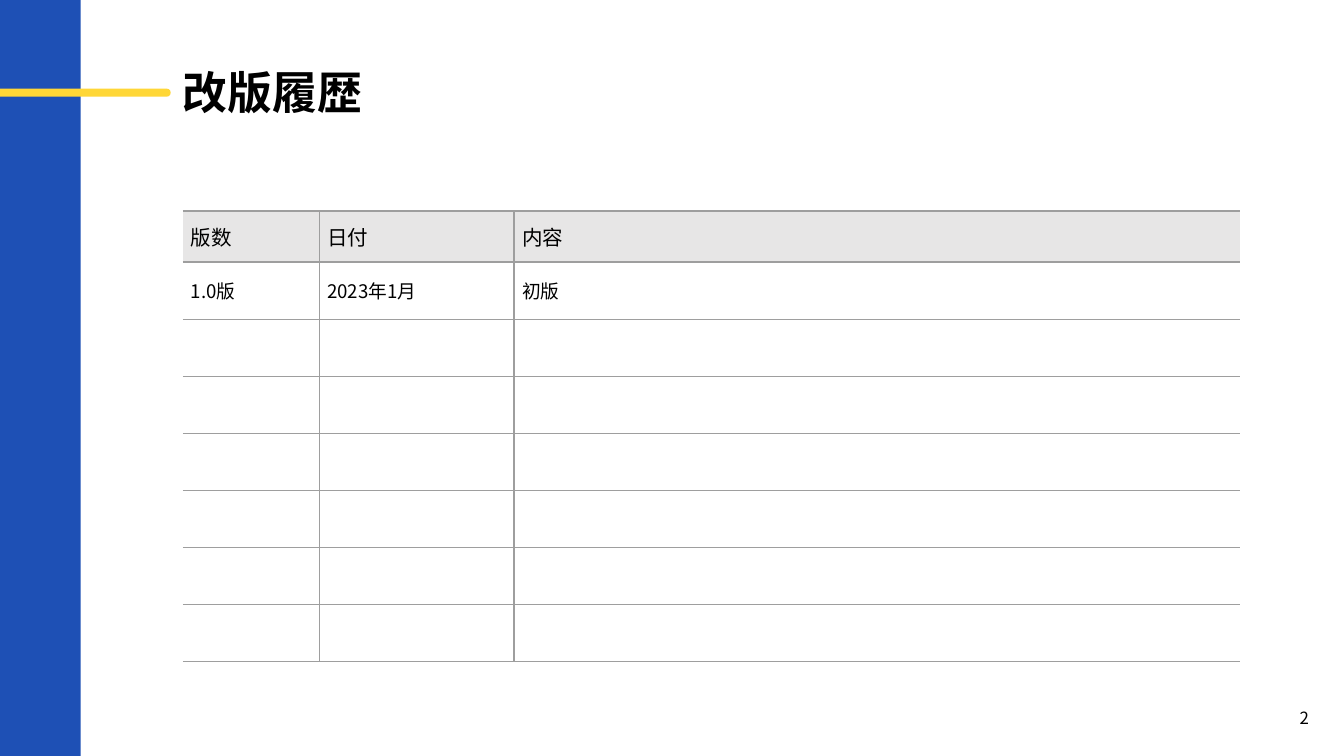
import pptx
import pptx.dml.color
import pptx.enum.shapes
import pptx.enum.text
import pptx.oxml.ns
import pptx.util
from lxml import etree

PX = 4572
FONT = "Noto Sans CJK JP"
COLORS = {"bar": "1E50B5", "stripe": "FFD737", "text": "000000", "head": "E7E6E6", "line": "9E9E9E"}
COLUMNS = (203, 290, 1081)
HEAD_H, ROW_H, INSET = 76, 85, 12
ROWS = [("版数", "日付", "内容"), ("1.0版", "2023年1月", "初版")] + [("", "", "")] * 6
MIDDLE = pptx.enum.text.MSO_ANCHOR.MIDDLE


def emu(*lengths):
    """Turn px lengths into EMU."""
    return [pptx.util.Emu(n * PX) for n in lengths]


def rgb(name):
    """Look up a named colour."""
    return pptx.dml.color.RGBColor.from_string(COLORS[name])


def sub(parent, tag, **attrs):
    """Append a DrawingML element."""
    return etree.SubElement(parent, pptx.oxml.ns.qn(tag), **attrs)


def write(tf, text, size, bold=False):
    """Set the text of a frame and format its run."""
    tf.text = text
    p = tf.paragraphs[0]
    for r in p.runs:
        r.font.size, r.font.bold, r.font.name = pptx.util.Pt(size), bold, FONT
        r.font.color.rgb = rgb("text")
        sub(r.font._element, "a:ea", typeface=FONT)
    if not text:
        sub(p._p, "a:endParaRPr", sz=str(size * 100))
    return p


def clear_insets(tf):
    """Remove the inner margins of a frame."""
    tf.margin_left = tf.margin_top = tf.margin_right = tf.margin_bottom = 0


def add_block(s, kind, box, color):
    """Add a plain filled shape."""
    sp = s.shapes.add_shape(kind, *emu(*box))
    sp.shadow.inherit = False
    sp.fill.solid()
    sp.fill.fore_color.rgb = rgb(color)
    sp.line.fill.background()
    return sp


def add_side(s, x, y, w, h):
    """Draw the side bar with the stripe that crosses it."""
    kinds = pptx.enum.shapes.MSO_SHAPE
    add_block(s, kinds.RECTANGLE, (x, y, w, h), "bar")
    stripe = add_block(s, kinds.ROUNDED_RECTANGLE, (x - 22, y + 132, w + 156, 12), "stripe")
    stripe.adjustments[0] = 0.5


def add_title(s, x, y, w, h):
    """Place and fill the title placeholder."""
    sp = s.shapes.title
    sp.left, sp.top, sp.width, sp.height = emu(x, y, w, h)
    tf = sp.text_frame
    clear_insets(tf)
    tf.vertical_anchor = pptx.enum.text.MSO_ANCHOR.TOP
    tf.auto_size = pptx.enum.text.MSO_AUTO_SIZE.SHAPE_TO_FIT_TEXT
    p = write(tf, "改版履歴", 24, True)
    p.alignment = pptx.enum.text.PP_ALIGN.LEFT
    p.line_spacing = 0.9


def add_page_number(s, x, y, w, h):
    """Write the page number in the centre of its box."""
    tf = s.shapes.add_textbox(*emu(x, y, w, h)).text_frame
    clear_insets(tf)
    tf.word_wrap = True
    tf.vertical_anchor = MIDDLE
    write(tf, "2", 9).alignment = pptx.enum.text.PP_ALIGN.CENTER


def add_border(cell, side, shown):
    """Set one border of a cell."""
    ln = sub(cell._tc.get_or_add_tcPr(), f"a:ln{side}", w=str(pptx.util.Pt(0.75)))
    if shown:
        sub(sub(ln, "a:solidFill"), "a:srgbClr", val=COLORS["line"])
    else:
        sub(ln, "a:noFill")


def add_history(s, x, y, w, h):
    """Build the revision table, open at its left and right edges."""
    table = s.shapes.add_table(len(ROWS), len(COLUMNS), *emu(x, y, w, h)).table
    table.first_row = table.horz_banding = False
    for column, width in zip(table.columns, emu(*COLUMNS)):
        column.width = width
    for i, texts in enumerate(ROWS):
        table.rows[i].height = emu(ROW_H if i else HEAD_H)[0]
        for j, text in enumerate(texts):
            cell = table.cell(i, j)
            cell.margin_left, cell.margin_top, cell.margin_right, cell.margin_bottom = emu(*[INSET] * 4)
            cell.vertical_anchor = MIDDLE
            for side in "LRTB":
                open_edge = (side == "L" and j == 0) or (side == "R" and j == len(COLUMNS) - 1)
                add_border(cell, side, not open_edge)
            if i == 0:
                cell.fill.solid()
                cell.fill.fore_color.rgb = rgb("head")
            else:
                cell.fill.background()
            write(cell.text_frame, text, 10 if i else 11)


def main():
    """Build the slide and save it."""
    prs = pptx.Presentation()
    prs.slide_width, prs.slide_height = emu(2000, 1125)
    s = prs.slides.add_slide(prs.slide_layouts[5])
    add_side(s, 0, 0, 120, 1125)
    add_title(s, 272, 106, 1574, 80)
    add_page_number(s, 1898, 1026, 86, 86)
    add_history(s, 272, 314, sum(COLUMNS), HEAD_H + ROW_H * (len(ROWS) - 1))
    prs.save("out.pptx")


if __name__ == "__main__":
    main()
